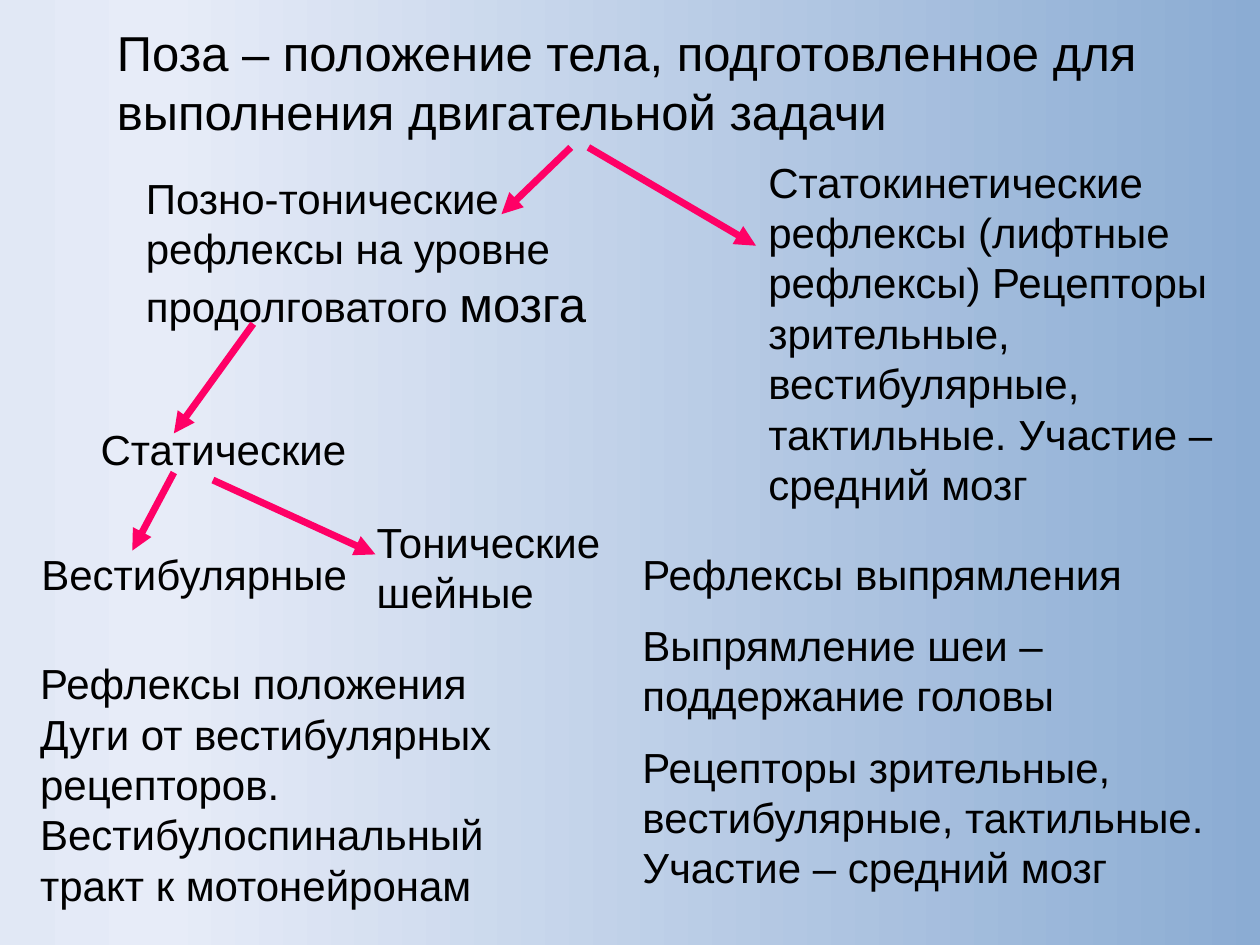
from copy import deepcopy
from dataclasses import dataclass

from lxml import etree
from pptx import Presentation
from pptx.dml.color import RGBColor
from pptx.enum.shapes import MSO_CONNECTOR
from pptx.enum.text import MSO_AUTO_SIZE
from pptx.oxml.ns import qn
from pptx.util import Inches, Pt

STRAIGHT = MSO_CONNECTOR.STRAIGHT
GROW = MSO_AUTO_SIZE.SHAPE_TO_FIT_TEXT


@dataclass(frozen=True)
class Theme:
    """Colours, font and sizes of the slide."""
    font: str = "Arial"
    title_size: int = 28
    body_size: int = 24
    arrow_width: int = 4
    text: str = "000000"
    arrow: str = "FF0066"
    background: tuple = ((0, "8BACD3"), (0.87, "E7ECF8"), (1, "E1E8F5"))


THEME = Theme()

TITLE = "Поза – положение тела, подготовленное для выполнения двигательной задачи"

BODY_TEXTS = [
    ((0.7, 3.31, 2.99, 0.5), ["Статические"]),
    ((6, 1.19, 4, 2.93), [
        "Статокинетические рефлексы (лифтные рефлексы) Рецепторы зрительные, "
        "вестибулярные, тактильные. Участие – средний мозг"]),
    ((5, 4.3, 5.15, 3.38), [
        "Рефлексы выпрямления",
        "Выпрямление шеи – поддержание головы",
        "Рецепторы зрительные, вестибулярные, тактильные. Участие – средний мозг"]),
    ((0.22, 5.17, 4.31, 2.12), [
        "Рефлексы положения Дуги от вестибулярных рецепторов. "
        "Вестибулоспинальный тракт к мотонейронам"]),
    ((0.23, 4.3, 2.92, 0.51), ["Вестибулярные"]),
    ((2.89, 4.05, 2.05, 0.91), ["Тонические шейные"]),
]

ARROWS = [
    ((4.53, 1.17), (3.98, 1.7)),
    ((4.67, 1.17), (6, 1.95)),
    ((2.01, 2.57), (1.38, 3.44)),
    ((1.38, 3.75), (1.05, 4.37)),
    ((1.69, 3.81), (2.98, 4.4)),
]


def set_background(slide):
    """Fill the slide with the horizontal three-stop gradient."""
    fill = slide.background.fill
    fill.gradient()
    fill.gradient_angle = 180
    stop_list = slide.background._cSld.find(".//" + qn("a:gsLst"))
    stop_list.append(deepcopy(stop_list[-1]))
    for stop, (position, colour) in zip(fill.gradient_stops, THEME.background):
        stop.position = position
        stop.color.rgb = RGBColor.from_string(colour)


def format_run(run, size):
    """Apply the theme font and colour at the given size."""
    run.font.name = THEME.font
    run.font.size = Pt(size)
    run.font.color.rgb = RGBColor.from_string(THEME.text)


def add_text(slide, box, paragraphs, size=THEME.body_size):
    """Add a wrapping text box with half a line between paragraphs."""
    shape = slide.shapes.add_textbox(*map(Inches, box))
    text_frame = shape.text_frame
    text_frame.text = "\n".join(paragraphs)
    text_frame.word_wrap = True
    text_frame.auto_size = GROW
    for index, paragraph in enumerate(text_frame.paragraphs):
        if index:
            paragraph.space_before = Pt(size / 2)
        for run in paragraph.runs:
            format_run(run, size)
    return shape


def add_arrow(slide, start, end):
    """Add a straight arrow pointing at its end."""
    connector = slide.shapes.add_connector(STRAIGHT, *map(Inches, start + end))
    connector.line.width = Pt(THEME.arrow_width)
    connector.line.color.rgb = RGBColor.from_string(THEME.arrow)
    line = connector.line._get_or_add_ln()
    etree.SubElement(line, qn("a:tailEnd"), type="triangle")
    etree.SubElement(connector._element.spPr, qn("a:effectLst"))


def main():
    """Build the slide and save it."""
    presentation = Presentation()
    presentation.slide_width = Inches(10)
    presentation.slide_height = Inches(7.5)
    slide = presentation.slides.add_slide(presentation.slide_layouts[6])
    set_background(slide)
    add_text(slide, (0.83, 0.13, 8.82, 1.04), [TITLE], THEME.title_size)
    tonic = add_text(slide, (1.06, 1.32, 4.33, 1.38),
                     ["Позно-тонические рефлексы на уровне продолговатого "])
    brain = tonic.text_frame.paragraphs[0].add_run()
    brain.text = "мозга"
    format_run(brain, THEME.title_size)
    for start, end in ARROWS:
        add_arrow(slide, start, end)
    for box, paragraphs in BODY_TEXTS:
        add_text(slide, box, paragraphs)
    presentation.save("out.pptx")


if __name__ == "__main__":
    main()
